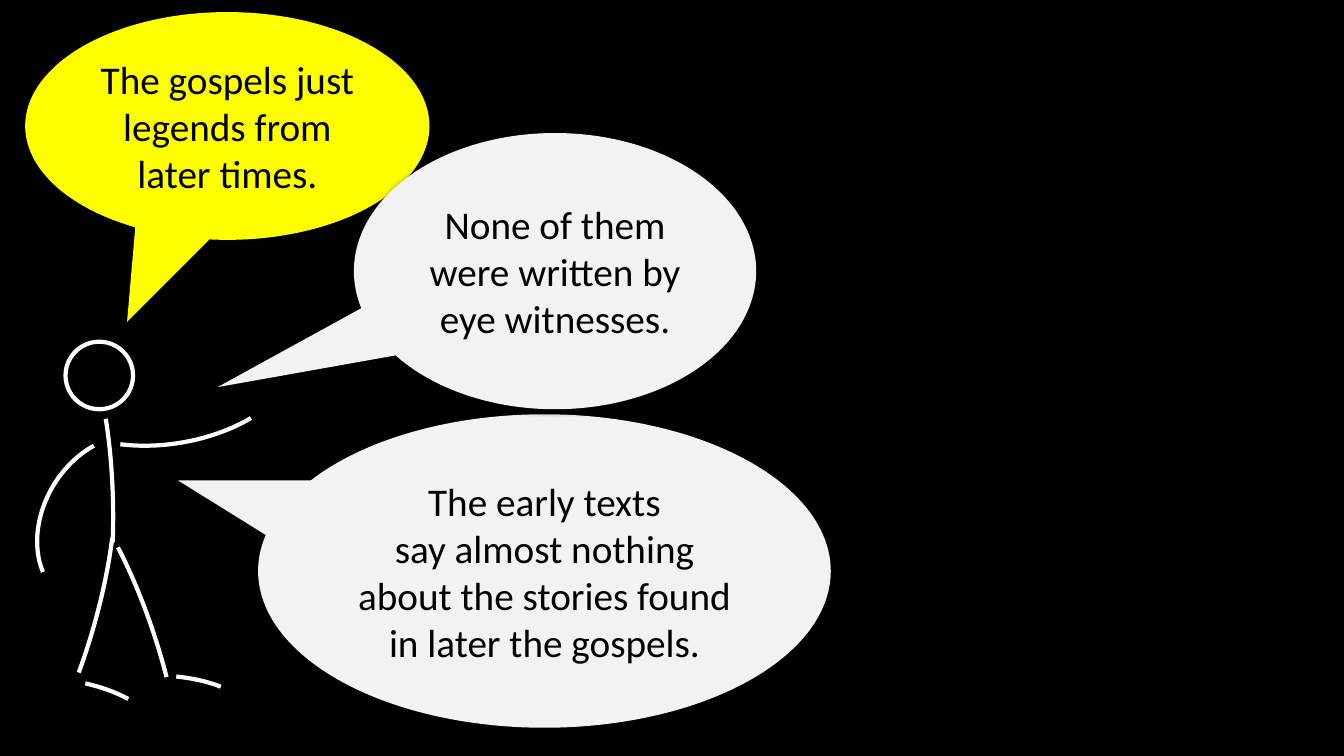
from lxml.etree import SubElement
from pptx import Presentation
from pptx.dml.color import RGBColor
from pptx.enum.shapes import MSO_SHAPE
from pptx.enum.text import MSO_ANCHOR, PP_ALIGN
from pptx.oxml.ns import qn
from pptx.util import Inches, Pt

COLORS = {"black": "000000", "white": "FFFFFF", "yellow": "FFFF00", "gray": "F2F2F2"}


class Board:
    font = "Calibri"
    size = Pt(28)
    stroke = Pt(3)

    def __init__(self, slide):
        self.slide = slide

    def color(self, name):
        return RGBColor.from_string(COLORS[name])

    def shape(self, kind, box, fill=None, line=None, parent=None):
        shapes = (parent or self.slide).shapes
        item = shapes.add_shape(kind, *map(Inches, box))
        item.shadow.inherit = False
        if fill:
            item.fill.solid()
            item.fill.fore_color.rgb = self.color(fill)
        else:
            item.fill.background()
        if line:
            item.line.color.rgb = self.color(line)
            item.line.width = self.stroke
        else:
            item.line.fill.background()
        return item

    def arc(self, group, box, turn, start, flip=False):
        limb = self.shape(MSO_SHAPE.ARC, box, line="white", parent=group)
        limb.adjustments[0] = start
        limb.adjustments[1] = 26.763
        limb.rotation = turn
        if flip:
            limb._element.spPr.find(qn("a:xfrm")).set("flipH", "1")

    def shadow(self, item):
        effects = item._element.spPr.find(qn("a:effectLst"))
        outer = SubElement(effects, qn("a:outerShdw"), blurRad=str(Pt(4.5)),
                           dist=str(Pt(1.5)), dir="5400000", rotWithShape="0")
        tint = SubElement(outer, qn("a:srgbClr"), val=COLORS["black"])
        SubElement(tint, qn("a:alpha"), val="63000")

    def bubble(self, box, tail, fill, text):
        item = self.shape(MSO_SHAPE.OVAL_CALLOUT, box, fill)
        for index, value in enumerate(tail):
            item.adjustments[index] = value
        self.shadow(item)
        frame = item.text_frame
        frame.word_wrap = True
        frame.vertical_anchor = MSO_ANCHOR.MIDDLE
        frame.text = text
        for para in frame.paragraphs:
            para.alignment = PP_ALIGN.CENTER
            for run in para.runs:
                run.font.name = self.font
                run.font.size = self.size
                run.font.color.rgb = self.color("black")


def main():
    deck = Presentation()
    deck.slide_width = Inches(13.33)
    deck.slide_height = Inches(7.5)
    board = Board(deck.slides.add_slide(deck.slide_layouts[6]))

    # Backdrop
    board.shape(MSO_SHAPE.RECTANGLE, (0, 0, 13.33, 7.5), "black")

    # Stick figure: head, then torso, legs, feet and arms
    figure = board.slide.shapes.add_group_shape()
    board.shape(MSO_SHAPE.OVAL, (0.65, 3.39, 0.67, 0.67), line="white", parent=figure)
    limbs = [
        ((0.18, 3.17, 0.94, 3.55), 358.3, 179.1, False),
        ((0.61, 4.66, 0.94, 3.55), 341.7, 176.065, False),
        ((0, 4.34, 0.94, 3.55), 16.2, 176.065, False),
        ((0.8, 6.44, 0.26, 0.99), 106.4, 171.911, True),
        ((1.72, 6.36, 0.26, 0.99), 99.3, 171.911, True),
        ((0.43, 4.27, 1.39, 1.81), 211, 176.065, False),
        ((0.99, 2.45, 1.39, 2.51), 80.4, 185.034, False),
    ]
    for limb in limbs:
        board.arc(figure, *limb)

    # Speech bubbles
    board.bubble((0.25, 0.12, 4.01, 2.26), (-0.248, 0.86), "yellow",
                 "The gospels just legends from later times.")
    board.bubble((2.56, 4.11, 5.68, 3.11), (-0.64, -0.289), "gray",
                 "The early texts\nsay almost nothing about the stories found "
                 "in later the gospels.")
    board.bubble((3.51, 1.32, 3.99, 2.74), (-0.839, 0.42), "gray",
                 "None of them were written by eye witnesses.")

    deck.save("out.pptx")


if __name__ == "__main__":
    main()
